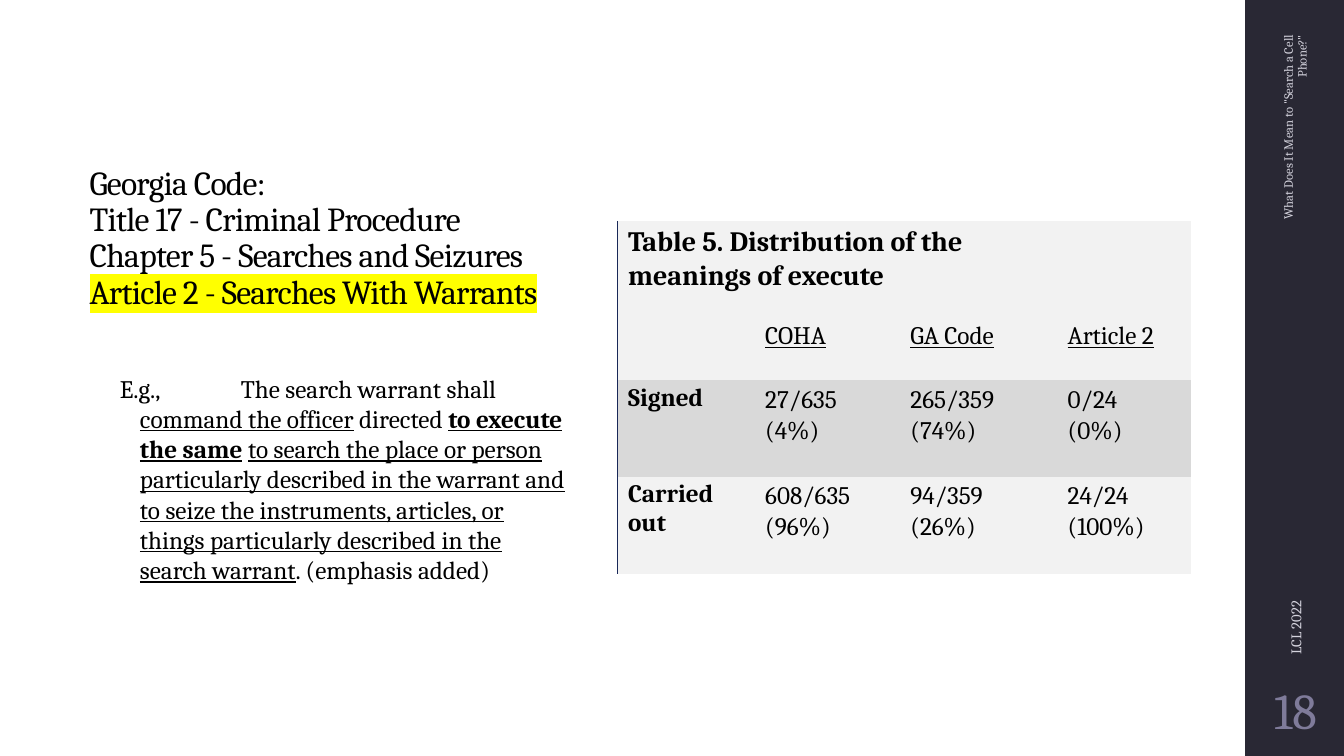
"""Build the slide on the meanings of "execute" in the Georgia Code."""
from dataclasses import dataclass

from lxml import etree
from pptx import Presentation
from pptx.dml.color import RGBColor
from pptx.enum.shapes import MSO_SHAPE
from pptx.enum.text import MSO_ANCHOR, PP_ALIGN
from pptx.oxml.ns import qn
from pptx.util import Inches, Pt

RECTANGLE = MSO_SHAPE.RECTANGLE
TOP, MIDDLE, BOTTOM = MSO_ANCHOR.TOP, MSO_ANCHOR.MIDDLE, MSO_ANCHOR.BOTTOM
LEFT, CENTER, RIGHT = PP_ALIGN.LEFT, PP_ALIGN.CENTER, PP_ALIGN.RIGHT

BLACK = RGBColor(0x00, 0x00, 0x00)
SIDEBAR = RGBColor(0x29, 0x28, 0x34)
FOOTER = RGBColor(0xD4, 0xD3, 0xDD)
NUMBER = RGBColor(0x7F, 0x7B, 0x9A)
PALE = RGBColor(0xF2, 0xF2, 0xF2)
GRAY = RGBColor(0xD9, 0xD9, 0xD9)
RULE = RGBColor(0x19, 0x28, 0x58)
YELLOW = RGBColor(0xFF, 0xFF, 0x00)

FONT = "Cambria"
PLAIN_TABLE = "{2D5ABB26-0587-4C30-8999-92F81FD0307C}"
COLUMN_WIDTHS = (1.36, 1.44, 1.56, 1.33)
ROW_HEIGHTS = (0.88, 0.63, 0.96, 0.96)
ROW_FILLS = (PALE, PALE, GRAY, PALE)
MEANINGS = (
    ("Table 5. Distribution of the meanings of execute", "", "", ""),
    ("", "COHA", "GA Code", "Article 2"),
    ("Signed", "27/635 (4%)", "265/359 (74%)", "0/24 (0%)"),
    ("Carried out", "608/635 (96%)", "94/359 (26%)", "24/24 (100%)"),
)


@dataclass(frozen=True)
class Span:
    text: str
    bold: bool = False
    underline: bool = False
    highlight: RGBColor | None = None


@dataclass(frozen=True)
class TextBlock:
    box: tuple[float, float, float, float]
    spans: tuple[Span, ...]
    size: float
    color: RGBColor = BLACK
    anchor: MSO_ANCHOR = TOP
    align: PP_ALIGN = LEFT
    line_spacing: float = 1.0
    space_after: float = 6
    insets: tuple[float, float, float, float] = (0.1, 0.05, 0.1, 0.05)
    rotation: float = 0
    hanging: tuple[float, float, float] | None = None
    tracking: float = 0


BLOCKS = (
    TextBlock((0.79, 0.74, 4.96, 2.6),
              (Span("Georgia Code:\nTitle 17 - Criminal Procedure\n"
                    "Chapter 5 - Searches and Seizures\n"),
               Span("Article 2 - Searches With Warrants", highlight=YELLOW)),
              24, anchor=BOTTOM, line_spacing=0.9, space_after=0,
              insets=(0.1, 0.05, 0.1, 0.25), tracking=-0.5),
    TextBlock((0.79, 3.65, 4.96, 3.1),
              (Span("E.g.,\tThe search warrant shall "),
               Span("command the officer", underline=True),
               Span(" directed "),
               Span("to execute the same", bold=True, underline=True),
               Span(" "),
               Span("to search the place or person particularly described in "
                    "the warrant and to seize the instruments, articles, or "
                    "things particularly described in the search warrant",
                    underline=True),
               Span(". (emphasis added)")),
              18, hanging=(0.5, -0.2, 1)),
    TextBlock((11.81, 1.09, 2.08, 0.4),
              (Span('What Does It Mean to "Search a Cell Phone?"'),),
              9, FOOTER, MIDDLE, RIGHT, 0.9, rotation=270),
    TextBlock((10.89, 4.43, 3.92, 0.4), (Span("LCL 2022"),),
              10.5, FOOTER, MIDDLE, rotation=270),
    TextBlock((12.35, 6.75, 1, 0.65), (Span("18"),),
              36, NUMBER, MIDDLE, CENTER, 0.9, insets=(0.05,) * 4),
)


def set_insets(target, insets: tuple[float, ...]) -> None:
    for side, inset in zip(("left", "top", "right", "bottom"), insets):
        setattr(target, f"margin_{side}", Inches(inset))


def add_run(paragraph, span: Span, size: float, color: RGBColor,
            tracking: float = 0) -> None:
    run = paragraph.add_run()
    run.text = span.text
    formats = {"name": FONT, "size": Pt(size), "bold": span.bold,
               "underline": span.underline}
    for attribute, value in formats.items():
        setattr(run.font, attribute, value)
    run.font.color.rgb = color
    properties = run._r.get_or_add_rPr()
    if tracking:
        properties.set("spc", str(round(tracking * 100)))
    if span.highlight is not None:
        highlight = etree.Element(qn("a:highlight"))
        etree.SubElement(highlight, qn("a:srgbClr"), val=str(span.highlight))
        properties.find(qn("a:latin")).addprevious(highlight)


def add_block(slide, block: TextBlock) -> None:
    box = slide.shapes.add_textbox(*map(Inches, block.box))
    box.rotation = block.rotation
    frame = box.text_frame
    frame.word_wrap = True
    frame.vertical_anchor = block.anchor
    set_insets(frame, block.insets)
    paragraph = frame.paragraphs[0]
    formats = {"alignment": block.align, "line_spacing": block.line_spacing,
               "space_after": Pt(block.space_after)}
    for attribute, value in formats.items():
        setattr(paragraph, attribute, value)
    if block.hanging:
        properties = paragraph._p.get_or_add_pPr()
        for name, length in zip(("marL", "indent", "defTabSz"), block.hanging):
            properties.set(name, str(Inches(length)))
    for span in block.spans:
        for index, line in enumerate(span.text.split("\n")):
            if index:
                paragraph.add_line_break()
            if line:
                add_run(paragraph, Span(line, span.bold, span.underline, span.highlight),
                        block.size, block.color, block.tracking)


def add_left_rule(cell) -> None:
    rule = etree.Element(qn("a:lnL"), w=str(Pt(0.5)))
    fill = etree.SubElement(rule, qn("a:solidFill"))
    etree.SubElement(fill, qn("a:srgbClr"), val=str(RULE))
    cell._tc.get_or_add_tcPr().insert(0, rule)


def add_meanings_table(slide) -> None:
    frame = slide.shapes.add_table(
        len(ROW_HEIGHTS), len(COLUMN_WIDTHS), Inches(6.12), Inches(2.19),
        Inches(sum(COLUMN_WIDTHS)), Inches(sum(ROW_HEIGHTS)))
    table = frame.table
    table.first_row = table.horz_banding = False
    table._tbl.tblPr.find(qn("a:tableStyleId")).text = PLAIN_TABLE
    for column, width in zip(table.columns, COLUMN_WIDTHS):
        column.width = Inches(width)
    for row, height in zip(table.rows, ROW_HEIGHTS):
        row.height = Inches(height)
    table.cell(0, 0).merge(table.cell(0, 2))
    for row, texts in enumerate(MEANINGS):
        for column, text in enumerate(texts):
            cell = table.cell(row, column)
            cell.fill.solid()
            cell.fill.fore_color.rgb = ROW_FILLS[row]
            is_label = column == 0
            if is_label:
                add_left_rule(cell)
            if text:
                set_insets(cell, (0.11, 0.03, 0.18 if is_label else 0.23,
                                  0.24 if row else 0.21))
                paragraph = cell.text_frame.paragraphs[0]
                paragraph.line_spacing = 1.0 if is_label and row else 1.07
                add_run(paragraph, Span(text, is_label, row == 1),
                        18 if row else 20, BLACK)


def main() -> None:
    deck = Presentation()
    deck.slide_width, deck.slide_height = Inches(13.33), Inches(7.5)
    slide = deck.slides.add_slide(deck.slide_layouts[6])
    sidebar = slide.shapes.add_shape(
        RECTANGLE, Inches(12.35), 0, Inches(1), Inches(7.5))
    sidebar.shadow.inherit = False
    sidebar.fill.solid()
    sidebar.fill.fore_color.rgb = SIDEBAR
    sidebar.line.fill.background()
    for block in BLOCKS:
        add_block(slide, block)
    add_meanings_table(slide)
    deck.save("out.pptx")


if __name__ == "__main__":
    main()
